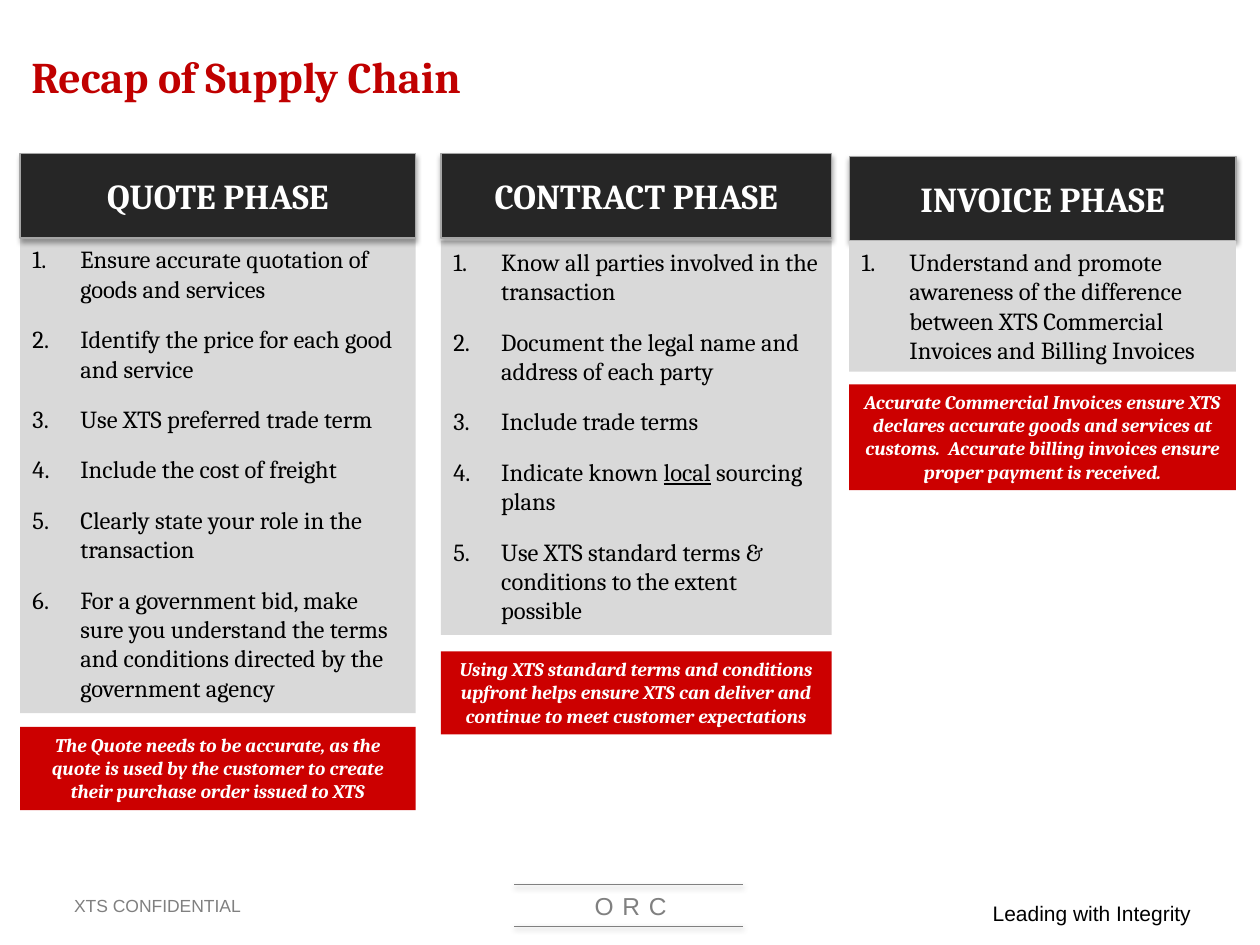
from dataclasses import dataclass

from lxml import etree
from pptx import Presentation
from pptx.dml.color import RGBColor
from pptx.enum import shapes, text
from pptx.oxml import ns
from pptx.util import Emu, Inches, Pt

COLS, ROWS = 100, 75
MID, LEFT = text.PP_ALIGN.CENTER, text.PP_ALIGN.LEFT


@dataclass(frozen=True)
class Theme:
    """Colours, fonts and type sizes."""
    serif: str = "Cambria"
    sans: str = "Arial"
    title: str = "C00000"
    head: str = "262626"
    edge: str = "A5A5A5"
    body: str = "D9D9D9"
    note: str = "CC0000"
    grey: str = "808080"
    ink: str = "000000"
    white: str = "FFFFFF"
    big: int = 25
    cap: int = 20
    item: int = 14
    small: int = 11


T = Theme()

PHASES = [
    dict(name="QUOTE PHASE", box=(1.6, 12.2, 31.4), top=18.9, tall=37.7,
         note_top=57.7, note_tall=6.6,
         items=["Ensure accurate quotation of goods and services",
                "Identify the price for each good and service",
                "Use XTS preferred trade term",
                "Include the cost of freight",
                "Clearly state your role in the transaction",
                "For a government bid, make sure you understand the terms "
                "and conditions directed by the government agency"],
         note="The Quote needs to be accurate, as the quote is used by the "
              "customer to create their purchase order issued to XTS"),
    dict(name="CONTRACT PHASE", box=(35, 12.2, 31), top=19.1, tall=31.3,
         note_top=51.7, note_tall=6.6,
         items=["Know all parties involved in the transaction",
                "Document the legal name and address of each party",
                "Include trade terms",
                "Indicate known _local_ sourcing plans",
                "Use XTS standard terms & conditions to the extent possible"],
         note="Using XTS standard terms and conditions upfront helps ensure "
              "XTS can deliver and continue to meet customer expectations"),
    dict(name="INVOICE PHASE", box=(67.4, 12.4, 30.7), top=19.1, tall=10.4,
         note_top=30.5, note_tall=8.4, gap=6, cover=True,
         items=["Understand and promote awareness of the difference between "
                "XTS Commercial Invoices and Billing Invoices"],
         note="Accurate Commercial Invoices ensure XTS declares accurate goods "
              "and services at customs.  Accurate billing invoices ensure "
              "proper payment is received."),
]


def grid(*cells):
    """Turn grid cells, ten to the inch, into lengths."""
    return [Emu(round(Inches(c / 10))) for c in cells]


def shade(shape, alpha, dist):
    """Give a shape a soft shadow below, or none when alpha is zero."""
    props = shape._element.spPr
    fx = etree.SubElement(props, ns.qn("a:effectLst"))
    if alpha:
        drop = etree.SubElement(fx, ns.qn("a:outerShdw"), blurRad=str(Pt(3.1)),
                                dist=str(Pt(dist)), dir="5400000", rotWithShape="0")
        tint = etree.SubElement(drop, ns.qn("a:srgbClr"), val="000000")
        etree.SubElement(tint, ns.qn("a:alpha"), val=str(alpha * 1000))


def write(shape, lines, size=12, font=T.serif, color=T.ink, bold=False, slant=False,
          align=LEFT, anchor="TOP", wrap=True, gap=0, track=0, number=False):
    """Fill a shape with paragraphs; underscores mark underlined words."""
    frame = shape.text_frame
    frame.word_wrap = wrap
    frame.vertical_anchor = text.MSO_ANCHOR[anchor]
    for i, line in enumerate(lines):
        para = frame.add_paragraph() if i else frame.paragraphs[0]
        para.alignment = align
        para.space_after = Pt(gap)
        if number:
            props = para._p.get_or_add_pPr()
            props.set("marL", str(Inches(0.38)))
            props.set("indent", str(Inches(-0.38)))
            etree.SubElement(props, ns.qn("a:buFont"), typeface="+mj-lt")
            etree.SubElement(props, ns.qn("a:buAutoNum"), type="arabicPeriod")
        for j, part in enumerate(line.split("_")):
            run = para.add_run()
            run.text = part
            face = run.font
            face.name, face.size, face.bold, face.italic = font, Pt(size), bold, slant
            face.color.rgb = RGBColor.from_string(color)
            if j % 2:
                face.underline = True
            if track:
                run._r.get_or_add_rPr().set("spc", str(track * 100))


def label(slide, box, line, **form):
    """Place a plain text box."""
    write(slide.shapes.add_textbox(*grid(*box)), [line], **form)


def panel(slide, box, fill, lines, edge=None, **form):
    """Place a filled rectangle with text, raised when it has an edge."""
    rect = slide.shapes.add_shape(shapes.MSO_SHAPE.RECTANGLE, *grid(*box))
    rect.fill.solid()
    rect.fill.fore_color.rgb = RGBColor.from_string(fill)
    if edge:
        rect.line.color.rgb = RGBColor.from_string(edge)
        rect.line.width = Pt(0.75)
    else:
        rect.line.fill.background()
    shade(rect, 35 if edge else 0, 1.8)
    write(rect, lines, **form)


def phase(slide, name, box, top, tall, note_top, note_tall, items, note,
          gap=12, cover=False):
    """Build one phase column: heading, numbered list and note."""
    x, y, w = box

    def head():
        """Place the heading."""
        panel(slide, (x, y, w, 6.7), T.head, [name], edge=T.edge, size=T.cap,
              color=T.white, bold=True, align=MID, anchor="MIDDLE")

    def body():
        """Place the list."""
        panel(slide, (x, top, w, tall), T.body, items, size=T.item,
              gap=gap, number=True)

    for part in (head, body) if cover else (body, head):
        part()
    panel(slide, (x, note_top, w, note_tall), T.note, [note], size=T.small,
          color=T.white, bold=True, slant=True, align=MID)


def footer(slide, x, y):
    """Build the footer from its left and top."""
    label(slide, (x, y + 0.3, 16.3, 2.7), "XTS CONFIDENTIAL", size=10,
          font=T.sans, color=T.grey, anchor="MIDDLE")
    label(slide, (x + 34.8, y, 20.7, 3.4), "ORC", size=14, font=T.sans,
          color=T.grey, align=MID, track=5)
    for row in (y, y + 3.3):
        rule = slide.shapes.add_connector(shapes.MSO_CONNECTOR.STRAIGHT,
                                          *grid(x + 35.9, row, x + 54.1, row))
        rule.line.color.rgb = RGBColor.from_string(T.grey)
        rule.line.width = Pt(0.5)
        shade(rule, 38, 1.6)
    label(slide, (x + 72.9, y + 0.8, 17.9, 3), "Leading with Integrity",
          font=T.sans, wrap=False)


def main():
    """Build and save the deck."""
    deck = Presentation()
    deck.slide_width, deck.slide_height = grid(COLS, ROWS)
    slide = deck.slides.add_slide(deck.slide_layouts[6])
    footer(slide, 4.9, 70.2)
    label(slide, (1.5, 1.3, 80.6, 9.5), "Recap of Supply Chain", size=T.big,
          color=T.title, bold=True, anchor="MIDDLE")
    for part in PHASES:
        phase(slide, **part)
    deck.save("out.pptx")


if __name__ == "__main__":
    main()
